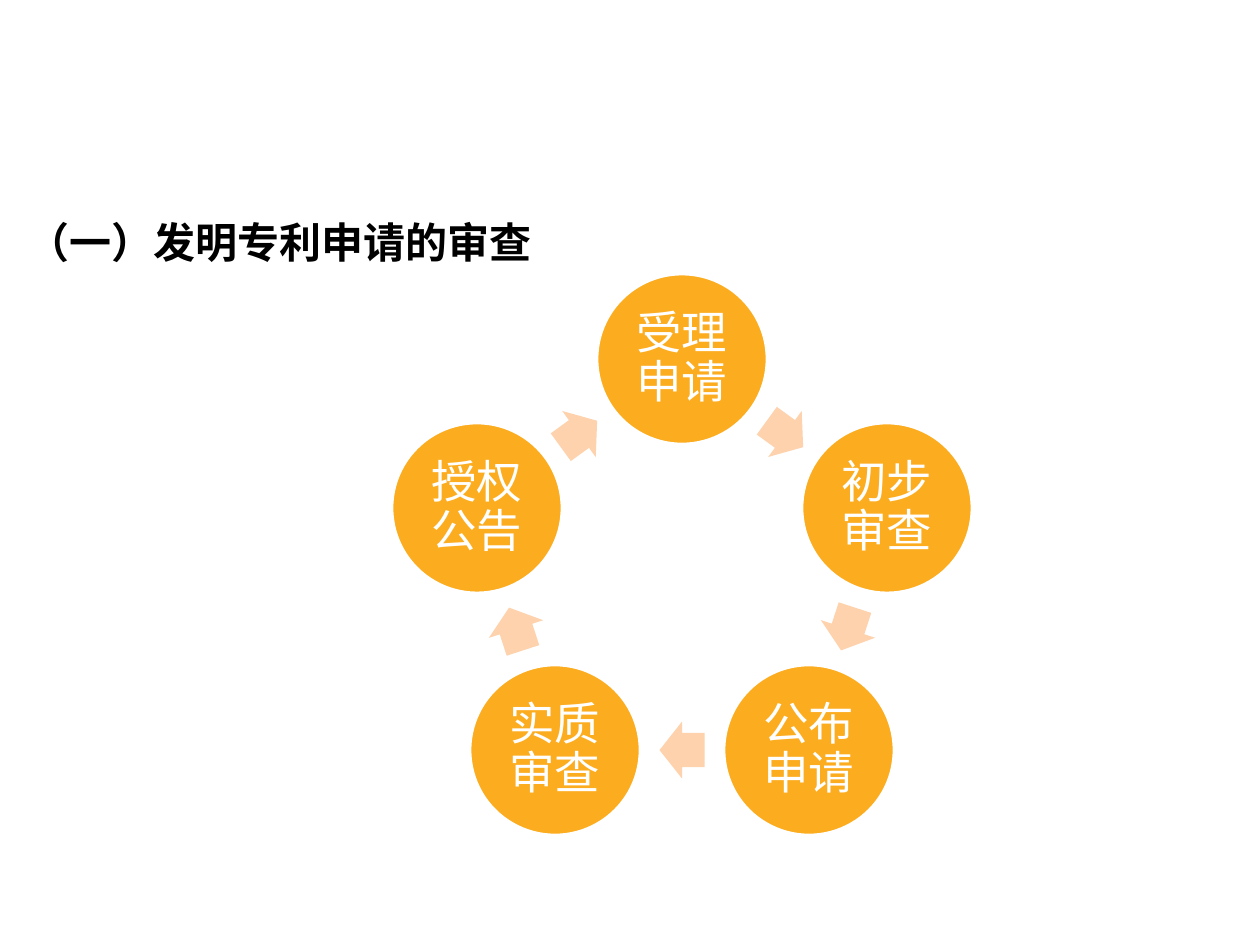
from dataclasses import dataclass
from math import cos, radians, sin

from pptx import Presentation
from pptx.dml.color import RGBColor
from pptx.enum.shapes import MSO_SHAPE
from pptx.enum.text import MSO_ANCHOR, MSO_AUTO_SIZE, PP_ALIGN
from pptx.util import Emu, Pt

EMU_PER_PX = 914400 / 126
COLOURS = {"text": "000000", "stage": "FCAC1F", "arrow": "FDD2AC", "white": "FFFFFF"}
STAGES = ["受理申请", "初步审查", "公布申请", "实质审查", "授权公告"]


@dataclass(frozen=True)
class Ring:
    """Centre and radius of the cycle, in px."""

    x: int
    y: int
    radius: int

    def point(self, angle: float, radius: float) -> tuple[int, int]:
        """Return the point at a clockwise angle from the top."""
        turn = radians(angle)
        return round(self.x + radius * sin(turn)), round(self.y - radius * cos(turn))


RING = Ring(682, 575, 216)


def px(length: float) -> Emu:
    """Turn px into EMU."""
    return Emu(round(length * EMU_PER_PX))


def colour(name: str) -> RGBColor:
    """Look up a named colour."""
    return RGBColor.from_string(COLOURS[name])


def apply_format(target, values: dict) -> None:
    """Set each attribute of the target from the format values."""
    for name, value in values.items():
        setattr(target, name, value)


def add_text(shape, text: str, frame_format: dict, paragraph_format: dict,
             font_format: dict, font_colour: str) -> None:
    """Write one formatted paragraph into a shape."""
    apply_format(shape.text_frame, {"word_wrap": True} | frame_format)
    paragraph = shape.text_frame.paragraphs[0]
    apply_format(paragraph, paragraph_format)
    run = paragraph.add_run()
    run.text = text
    apply_format(run.font, {"name": "Arial"} | font_format)
    run.font.color.rgb = colour(font_colour)


def add_centred_shape(slide, kind: MSO_SHAPE, centre: tuple[int, int],
                      width: int, height: int, fill: str):
    """Add a filled shape around its centre."""
    x, y = centre
    shape = slide.shapes.add_shape(
        kind, px(x - width / 2), px(y - height / 2), px(width), px(height))
    shape.shadow.inherit = False
    shape.fill.solid()
    shape.fill.fore_color.rgb = colour(fill)
    return shape


def add_stage(slide, text: str, angle: float) -> None:
    """Add one labelled circle of the cycle."""
    centre = RING.point(angle, RING.radius)
    circle = add_centred_shape(slide, MSO_SHAPE.OVAL, centre, 169, 169, "stage")
    circle.line.color.rgb = colour("white")
    circle.line.width = Pt(1)
    margins = {f"margin_{side}": px(5) for side in ("left", "top", "right", "bottom")}
    add_text(circle, text, margins | {"vertical_anchor": MSO_ANCHOR.MIDDLE},
             {"alignment": PP_ALIGN.CENTER, "line_spacing": 0.9},
             {"size": Pt(26)}, "white")


def add_arrow(slide, angle: float, step: float) -> None:
    """Add the arrow that follows the stage at the given angle."""
    middle = angle + step / 2
    centre = RING.point(middle, RING.radius * cos(radians(step / 2)))
    arrow = add_centred_shape(slide, MSO_SHAPE.RIGHT_ARROW, centre, 45, 57, "arrow")
    arrow.line.fill.background()
    arrow.adjustments[0] = 0.6
    arrow.adjustments[1] = 0.5
    arrow.rotation = middle


def main() -> None:
    """Build the slide and save it."""
    presentation = Presentation()
    apply_format(presentation, {"slide_width": px(1260), "slide_height": px(945)})
    slide = presentation.slides.add_slide(presentation.slide_layouts[6])
    heading = slide.shapes.add_textbox(px(15), px(210), px(953), px(63))
    add_text(heading, "（一）发明专利申请的审查",
             {"auto_size": MSO_AUTO_SIZE.SHAPE_TO_FIT_TEXT}, {},
             {"size": Pt(24), "bold": True}, "text")
    step = 360 / len(STAGES)
    for index, text in enumerate(STAGES):
        add_stage(slide, text, index * step)
        add_arrow(slide, index * step, step)
    presentation.save("out.pptx")


if __name__ == "__main__":
    main()
